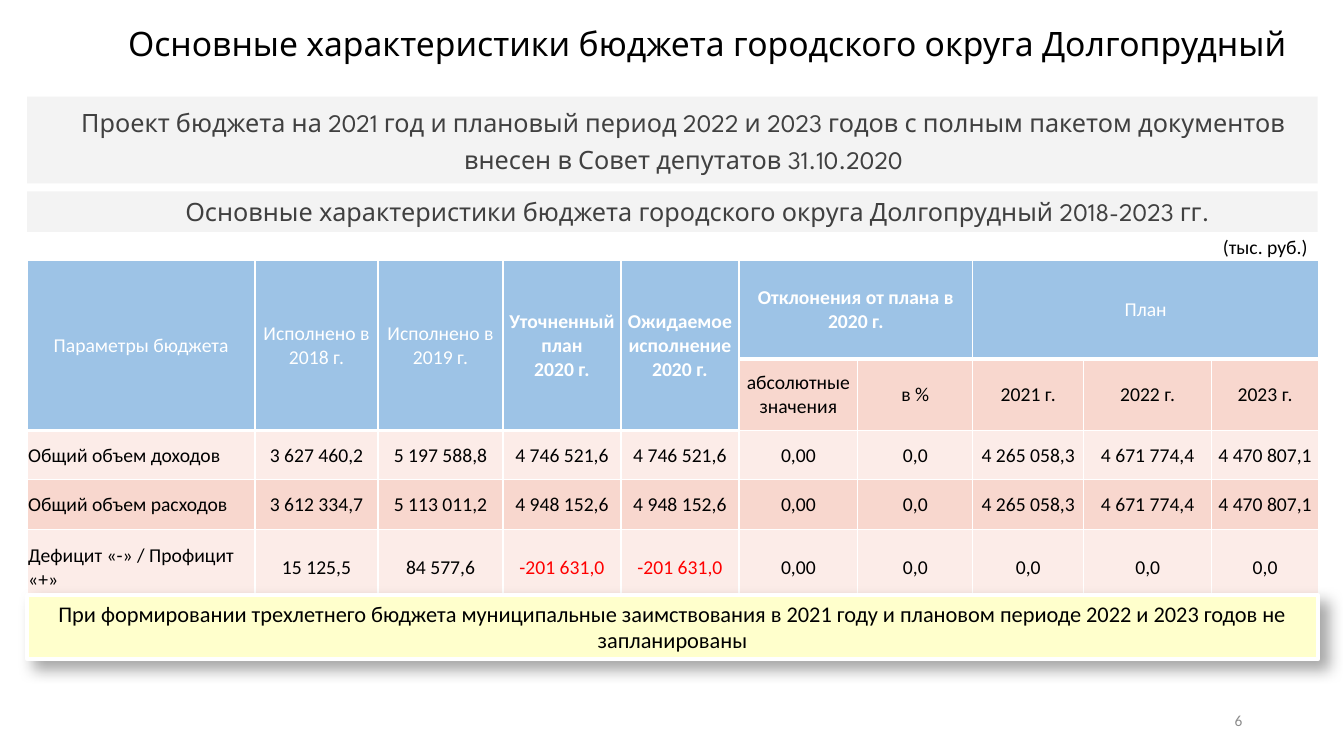
from dataclasses import dataclass, field
from typing import Any, Optional

import pptx
import pptx.dml.color
import pptx.enum.shapes
import pptx.enum.text
import pptx.oxml
import pptx.oxml.ns
import pptx.util

Inches = pptx.util.Inches
Pt = pptx.util.Pt
ALIGN = pptx.enum.text.PP_ALIGN
ANCHOR = pptx.enum.text.MSO_ANCHOR
AUTO_SIZE = pptx.enum.text.MSO_AUTO_SIZE


@dataclass(frozen=True)
class Theme:
    heading_font: str = "League Spartan"
    body_font: str = "Calibri"
    title_size: int = 24
    banner_size: int = 18
    note_size: int = 16
    table_size: int = 14
    page_size: int = 11
    black: str = "000000"
    white: str = "FFFFFF"
    grey_text: str = "404040"
    page_text: str = "8C8C8C"
    deficit: str = "FF0000"
    banner: str = "EDEDED"
    note: str = "FFFFCC"
    header: str = "9DC3E6"
    dark_band: str = "F8D7CE"
    light_band: str = "FCECE8"


THEME = Theme()


@dataclass(frozen=True)
class Block:
    text: str
    place: tuple[float, float, float, float]
    size: int
    color: str
    font: str = THEME.body_font
    fill: Optional[str] = None
    opacity: int = 100
    indent: float = 0
    shadowed: bool = False
    frame: dict[str, Any] = field(default_factory=dict)
    paragraph: dict[str, Any] = field(default_factory=dict)


@dataclass(frozen=True)
class HeaderCell:
    row: int
    column: int
    text: str
    rows: int = 1
    columns: int = 1
    bold: bool = False


CENTERED = {"alignment": ALIGN.CENTER}
GROWING = {"auto_size": AUTO_SIZE.SHAPE_TO_FIT_TEXT}
LEFT, WIDTH = 0.27, 12.8

TITLE = Block("Основные характеристики бюджета городского округа Долгопрудный",
              (0.96, 0.18, 12.11, 0.5), THEME.title_size, THEME.black,
              THEME.heading_font, frame=GROWING, paragraph=CENTERED)
SUBMISSION = Block(
    "Проект бюджета на 2021 год и плановый период 2022 и 2023 годов с полным пакетом "
    "документов внесен в Совет депутатов 31.10.2020",
    (LEFT, 0.96, WIDTH, 0.86), THEME.banner_size, THEME.grey_text, THEME.heading_font,
    THEME.banner, 66, 0.22, paragraph={**CENTERED, "level": 1, "line_spacing": 1.2})
FOREGROUND = [
    Block("При формировании трехлетнего бюджета муниципальные заимствования в 2021 году "
          "и плановом периоде 2022 и 2023 годов не запланированы",
          (LEFT, 5.9, WIDTH, 0.64), THEME.note_size, THEME.black, fill=THEME.note,
          shadowed=True, frame=GROWING, paragraph=CENTERED),
    Block("Основные характеристики бюджета городского округа Долгопрудный 2018-2023 гг.",
          (LEFT, 1.9, WIDTH, 0.4), THEME.banner_size, THEME.grey_text, THEME.heading_font,
          THEME.banner, 66, 0.5, paragraph={**CENTERED, "level": 1}),
    Block("(тыс. руб.)", (12.03, 2.28, 1.05, 0.34), THEME.table_size, THEME.black,
          frame={**GROWING, "word_wrap": False}),
    Block("6", (9.42, 6.95, 3, 0.4), THEME.page_size, THEME.page_text,
          frame={"vertical_anchor": ANCHOR.MIDDLE}, paragraph={"alignment": ALIGN.RIGHT}),
]

COLUMN_WIDTHS = [2.26, 1.22, 1.24, 1.17, 1.17, 1.18, 1.14, 1.1, 1.27, 1.06]
ROW_HEIGHTS = [0.98, 0.71, 0.49, 0.49, 0.75]
HEADERS = [
    HeaderCell(0, 0, "Параметры бюджета", rows=2),
    HeaderCell(0, 1, "Исполнено в\n2018 г.", rows=2),
    HeaderCell(0, 2, "Исполнено в\n2019 г.", rows=2),
    HeaderCell(0, 3, "Уточненный план\n2020 г.", rows=2, bold=True),
    HeaderCell(0, 4, "Ожидаемое исполнение\n2020 г.", rows=2, bold=True),
    HeaderCell(0, 5, "Отклонения от плана в 2020 г.", columns=2, bold=True),
    HeaderCell(0, 7, "План", columns=3),
    HeaderCell(1, 5, "абсолютные значения"),
    HeaderCell(1, 6, "в %"),
    HeaderCell(1, 7, "2021 г."),
    HeaderCell(1, 8, "2022 г."),
    HeaderCell(1, 9, "2023 г."),
]
BUDGET = [
    ["Общий объем доходов", "3 627 460,2", "5 197 588,8", "4 746 521,6", "4 746 521,6",
     "0,00", "0,0", "4 265 058,3", "4 671 774,4", "4 470 807,1"],
    ["Общий объем расходов", "3 612 334,7", "5 113 011,2", "4 948 152,6", "4 948 152,6",
     "0,00", "0,0", "4 265 058,3", "4 671 774,4", "4 470 807,1"],
    ["Дефицит «-» / Профицит «+»", "15 125,5", "84 577,6", "-201 631,0", "-201 631,0",
     "0,00", "0,0", "0,0", "0,0", "0,0"],
]


def rgb(color: str) -> pptx.dml.color.RGBColor:
    return pptx.dml.color.RGBColor.from_string(color)


def apply_format(target: Any, values: dict[str, Any]) -> None:
    for name, value in values.items():
        setattr(target, name, value)


def add_xml(parent: Any, xml: str) -> None:
    tag, rest = xml.split(" ", 1)
    parent.append(pptx.oxml.parse_xml(f"{tag} {pptx.oxml.ns.nsdecls('a')} {rest}"))


def write_text(text_frame: Any, text: str, font: dict[str, Any], color: str,
               paragraph_format: dict[str, Any], indent: float = 0) -> None:
    text_frame.text = text
    for paragraph in text_frame.paragraphs:
        apply_format(paragraph, paragraph_format)
        if indent:
            apply_format_xml = {"marL": Inches(indent), "indent": 0}
            for name, value in apply_format_xml.items():
                paragraph._p.get_or_add_pPr().set(name, str(value))
        for run in paragraph.runs:
            apply_format(run.font, font)
            run.font.color.rgb = rgb(color)


def fill_block(shape: Any, block: Block) -> None:
    sides = ("left", "top", "width", "height")
    apply_format(shape, {side: Inches(value) for side, value in zip(sides, block.place)})
    apply_format(shape.text_frame, {"word_wrap": True, "vertical_anchor": ANCHOR.TOP,
                                    **block.frame})
    write_text(shape.text_frame, block.text,
               {"name": block.font, "size": Pt(block.size), "bold": False},
               block.color, block.paragraph, block.indent)


def add_block(slide: Any, block: Block) -> None:
    place = [Inches(value) for value in block.place]
    if block.fill is None:
        fill_block(slide.shapes.add_textbox(*place), block)
        return
    panel = slide.shapes.add_shape(pptx.enum.shapes.MSO_SHAPE.RECTANGLE, *place)
    panel.shadow.inherit = False
    panel.fill.solid()
    panel.fill.fore_color.rgb = rgb(block.fill)
    if block.opacity < 100:
        tint = panel._element.spPr.find(".//" + pptx.oxml.ns.qn("a:srgbClr"))
        add_xml(tint, f'<a:alpha val="{block.opacity * 1000}"/>')
    if block.shadowed:
        panel.line.color.rgb = rgb(THEME.white)
        panel.line.width = Pt(3)
        effects = panel._element.spPr.find(pptx.oxml.ns.qn("a:effectLst"))
        add_xml(effects, f'<a:outerShdw blurRad="{Pt(10.2)}" dist="{Pt(8)}" dir="2700000" '
                         f'algn="tl" rotWithShape="0"><a:srgbClr val="{THEME.black}">'
                         '<a:alpha val="35000"/></a:srgbClr></a:outerShdw>')
    else:
        panel.line.fill.background()
    fill_block(panel, block)


def format_cell(cell: Any, fill: str, bottom_width: int) -> None:
    apply_format(cell, {"margin_left": Inches(0.01), "margin_right": Inches(0.01),
                        "margin_top": Inches(0.01), "margin_bottom": 0,
                        "vertical_anchor": ANCHOR.MIDDLE})
    for side, width in {"L": 1, "R": 1, "T": 1, "B": bottom_width}.items():
        add_xml(cell._tc.get_or_add_tcPr(),
                f'<a:ln{side} w="{Pt(width)}"><a:solidFill><a:srgbClr val="{THEME.white}"/>'
                f'</a:solidFill></a:ln{side}>')
    cell.fill.solid()
    cell.fill.fore_color.rgb = rgb(fill)


def add_budget_table(slide: Any) -> None:
    table = slide.shapes.add_table(
        len(ROW_HEIGHTS), len(COLUMN_WIDTHS), Inches(LEFT), Inches(2.58),
        Inches(WIDTH), Inches(sum(ROW_HEIGHTS))).table
    apply_format(table, {"first_row": False, "horz_banding": False})
    for column, width in zip(table.columns, COLUMN_WIDTHS):
        column.width = Inches(width)
    for index, (row, height) in enumerate(zip(table.rows, ROW_HEIGHTS)):
        row.height = Inches(height)
        band = THEME.dark_band if index % 2 else THEME.light_band
        for position, cell in enumerate(row.cells):
            in_header = index == 0 or (index == 1 and position < 5)
            format_cell(cell, THEME.header if in_header else band, 1 if index else 3)
    font = {"name": THEME.body_font, "size": Pt(THEME.table_size)}
    for header in HEADERS:
        cell = table.cell(header.row, header.column)
        if header.rows * header.columns > 1:
            cell.merge(table.cell(header.row + header.rows - 1,
                                  header.column + header.columns - 1))
        write_text(cell.text_frame, header.text, {**font, "bold": header.bold},
                   THEME.black if header.row else THEME.white, CENTERED)
    for index, values in enumerate(BUDGET, start=2):
        for position, value in enumerate(values):
            write_text(table.cell(index, position).text_frame, value, font,
                       THEME.deficit if value.startswith("-") else THEME.black,
                       CENTERED if position else {"alignment": ALIGN.LEFT})


def main() -> None:
    presentation = pptx.Presentation()
    apply_format(presentation, {"slide_width": Inches(13.33), "slide_height": Inches(7.5)})
    slide = presentation.slides.add_slide(presentation.slide_layouts[5])
    add_block(slide, SUBMISSION)
    fill_block(slide.shapes.title, TITLE)
    add_budget_table(slide)
    for block in FOREGROUND:
        add_block(slide, block)
    presentation.save("out.pptx")


if __name__ == "__main__":
    main()
